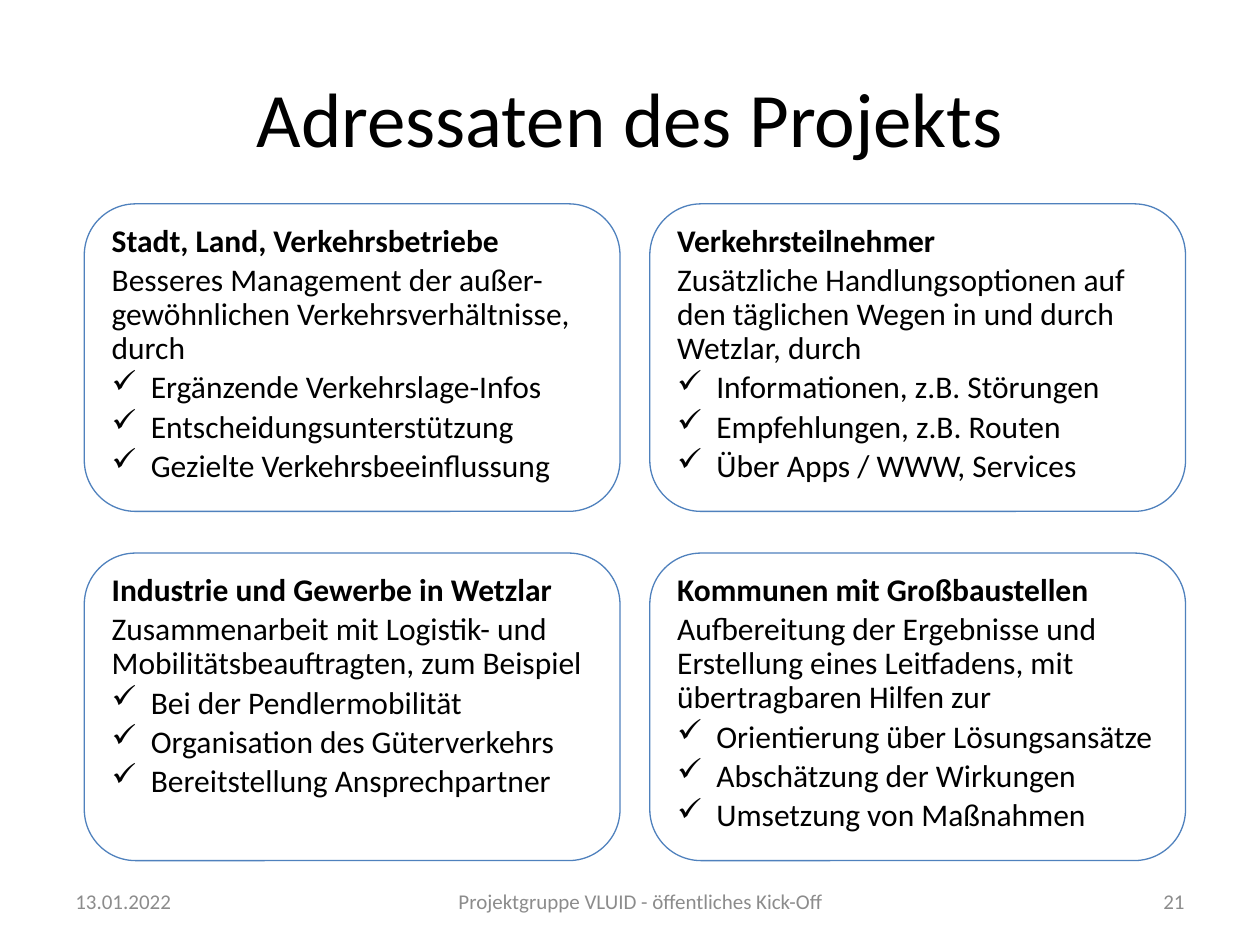
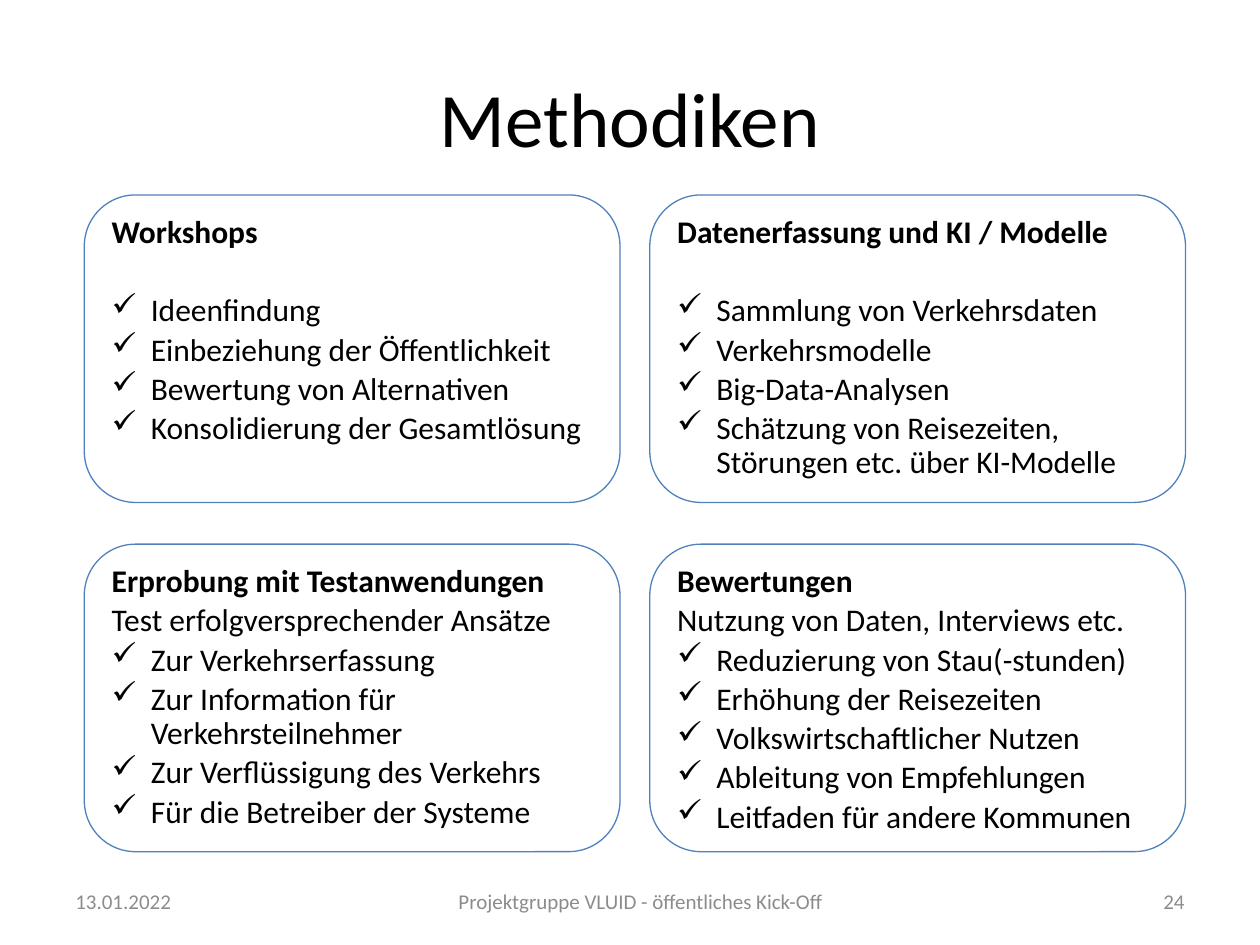
from dataclasses import dataclass

from lxml.etree import SubElement
from pptx import Presentation
from pptx.dml.color import RGBColor
from pptx.enum.shapes import MSO_SHAPE
from pptx.enum.text import MSO_ANCHOR, PP_ALIGN
from pptx.oxml.ns import qn
from pptx.presentation import Presentation as Deck
from pptx.slide import Slide
from pptx.text.text import TextFrame
from pptx.util import Cm, Pt

BLACK = RGBColor(0x00, 0x00, 0x00)
GREY = RGBColor(0x8C, 0x8C, 0x8C)
BLUE = RGBColor(0x4F, 0x81, 0xBD)
FONT = "Calibri"

TITLE_ONLY = 5
CARD_LEFT, CARD_WIDTH, CARD_HEIGHT = 1.7, 10.8, 6.2
COLUMN_STEP, ROW_STEP = 11.4, 7.04
BULLET_INDENT = Cm(0.79)
PARAGRAPH_GAP = 3
GAP_WITHOUT_INTRO = 25.4


@dataclass(frozen=True)
class Card:
    heading: str
    intro: str
    points: tuple[str, ...]


@dataclass(frozen=True)
class CardPage:
    title: str
    number: str
    cards_top: float
    cards: tuple[Card, ...]


@dataclass(frozen=True)
class FooterField:
    left: float
    width: float
    align: PP_ALIGN
    text: str


PAGES = (
    CardPage("Adressaten des Projekts", "21", 4.11, (
        Card("Stadt, Land, Verkehrsbetriebe",
             "Besseres Management der außer-gewöhnlichen Verkehrsverhältnisse, durch",
             ("Ergänzende Verkehrslage-Infos", "Entscheidungsunterstützung",
              "Gezielte Verkehrsbeeinflussung")),
        Card("Verkehrsteilnehmer",
             "Zusätzliche Handlungsoptionen auf den täglichen Wegen in und durch Wetzlar, durch",
             ("Informationen, z.B. Störungen", "Empfehlungen, z.B. Routen",
              "Über Apps / WWW, Services")),
        Card("Industrie und Gewerbe in Wetzlar",
             "Zusammenarbeit mit Logistik- und Mobilitätsbeauftragten, zum Beispiel",
             ("Bei der Pendlermobilität", "Organisation des Güterverkehrs",
              "Bereitstellung Ansprechpartner")),
        Card("Kommunen mit Großbaustellen",
             "Aufbereitung der Ergebnisse und Erstellung eines Leitfadens, "
             "mit übertragbaren Hilfen zur",
             ("Orientierung über Lösungsansätze", "Abschätzung der Wirkungen",
              "Umsetzung von Maßnahmen")),
    )),
    CardPage("Methodiken", "24", 3.93, (
        Card("Workshops", "",
             ("Ideenfindung", "Einbeziehung der Öffentlichkeit",
              "Bewertung von Alternativen", "Konsolidierung der Gesamtlösung")),
        Card("Datenerfassung und KI / Modelle", "",
             ("Sammlung von Verkehrsdaten", "Verkehrsmodelle", "Big-Data-Analysen",
              "Schätzung von Reisezeiten, Störungen etc. über KI-Modelle")),
        Card("Erprobung mit Testanwendungen", "Test erfolgversprechender Ansätze",
             ("Zur Verkehrserfassung", "Zur Information für Verkehrsteilnehmer",
              "Zur Verflüssigung des Verkehrs", "Für die Betreiber der Systeme")),
        Card("Bewertungen", "Nutzung von Daten, Interviews etc.",
             ("Reduzierung von Stau(-stunden)", "Erhöhung der Reisezeiten",
              "Volkswirtschaftlicher Nutzen", "Ableitung von Empfehlungen",
              "Leitfaden für andere Kommunen")),
    )),
)


def write_line(frame: TextFrame, text: str, size: float, color: RGBColor,
               align: PP_ALIGN = PP_ALIGN.LEFT) -> None:
    para = frame.paragraphs[0]
    para.alignment = align
    add_span(para, text, size, color)


def add_span(para, text: str, size: float, color: RGBColor, bold: bool = False) -> None:
    span = para.add_run()
    span.text = text
    span.font.name = FONT
    span.font.size = Pt(size)
    span.font.bold = bold
    span.font.color.rgb = color


def add_card_paragraph(frame: TextFrame, text: str, gap: float = PARAGRAPH_GAP,
                       bullet: bool = False) -> None:
    para = frame.add_paragraph()
    para.alignment = PP_ALIGN.LEFT
    para.line_spacing = 0.9
    para.space_before = Pt(gap)
    if bullet:
        properties = para._p.get_or_add_pPr()
        properties.set("marL", str(BULLET_INDENT))
        properties.set("indent", str(-BULLET_INDENT))
        SubElement(properties, qn("a:buChar")).set("char", "✓")
    add_span(para, text, 18, BLACK)


def draw_title(page: Slide, text: str) -> None:
    title = page.shapes.title
    title.left, title.top = Cm(1.27), Cm(0.76)
    title.width, title.height = Cm(22.86), Cm(3.18)
    title.text_frame.vertical_anchor = MSO_ANCHOR.MIDDLE
    write_line(title.text_frame, text, 44, BLACK, PP_ALIGN.CENTER)


def draw_card(page: Slide, card: Card, left: float, top: float) -> None:
    box = page.shapes.add_shape(MSO_SHAPE.ROUNDED_RECTANGLE, Cm(left), Cm(top),
                                Cm(CARD_WIDTH), Cm(CARD_HEIGHT))
    box.shadow.inherit = False
    box.fill.background()
    box.line.color.rgb = BLUE
    box.line.width = Pt(0.75)
    frame = box.text_frame
    frame.word_wrap = True
    frame.vertical_anchor = MSO_ANCHOR.TOP
    heading = frame.paragraphs[0]
    heading.alignment = PP_ALIGN.LEFT
    heading.line_spacing = 0.9
    add_span(heading, card.heading, 18, BLACK, bold=True)
    if card.intro:
        add_card_paragraph(frame, card.intro)
    for index, point in enumerate(card.points):
        follows_heading = index == 0 and not card.intro
        gap = GAP_WITHOUT_INTRO if follows_heading else PARAGRAPH_GAP
        add_card_paragraph(frame, point, gap, bullet=True)


def draw_footer(page: Slide, number: str) -> None:
    fields = (
        FooterField(7.9, 10.03, PP_ALIGN.CENTER, "Projektgruppe VLUID - öffentliches Kick-Off"),
        FooterField(1.27, 5.92, PP_ALIGN.LEFT, "13.01.2022"),
        FooterField(18.21, 5.92, PP_ALIGN.RIGHT, number),
    )
    for field in fields:
        box = page.shapes.add_textbox(Cm(field.left), Cm(17.65), Cm(field.width), Cm(1.02))
        box.text_frame.word_wrap = True
        box.text_frame.vertical_anchor = MSO_ANCHOR.MIDDLE
        write_line(box.text_frame, field.text, 12, GREY, field.align)


def draw_page(deck: Deck, content: CardPage) -> None:
    page = deck.slides.add_slide(deck.slide_layouts[TITLE_ONLY])
    draw_title(page, content.title)
    for index, card in enumerate(content.cards):
        row, column = divmod(index, 2)
        draw_card(page, card, CARD_LEFT + column * COLUMN_STEP,
                  content.cards_top + row * ROW_STEP)
    draw_footer(page, content.number)


def main() -> None:
    deck = Presentation()
    deck.slide_width, deck.slide_height = Cm(25.4), Cm(19.05)
    for content in PAGES:
        draw_page(deck, content)
    deck.save("out.pptx")


if __name__ == "__main__":
    main()
